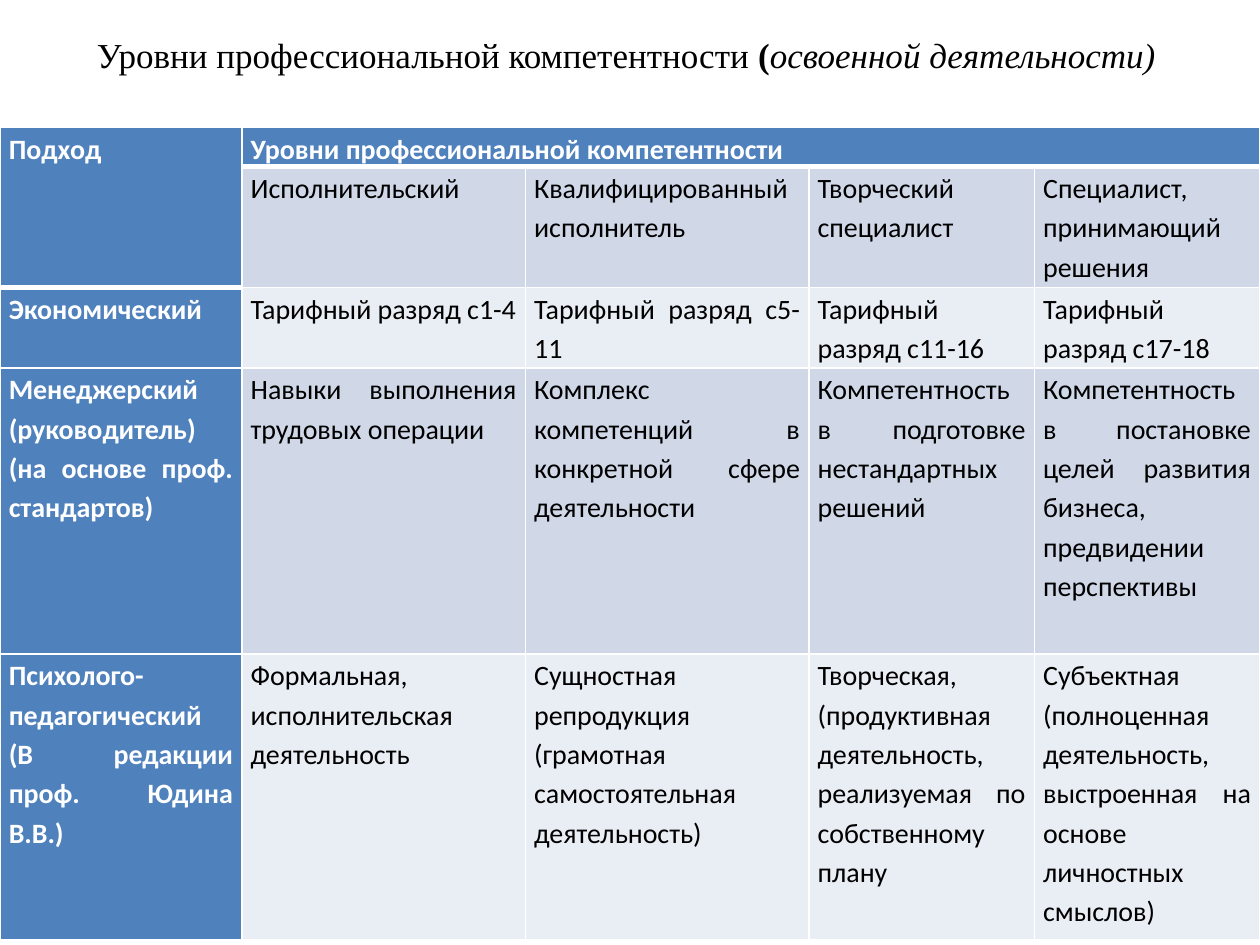
import pptx
import pptx.dml.color
import pptx.enum.text
import pptx.oxml
import pptx.oxml.ns
import pptx.util

Inches, Pt = pptx.util.Inches, pptx.util.Pt
BLUE, WHITE, BLACK = "4F81BD", "FFFFFF", "000000"
BANDS = ["D0D8E8", "E9EDF4"]
COLUMNS = [1.92, 2.25, 2.25, 1.79, 1.79]
ROWS = [0.31, 0.96, 0.64, 2.27, 2.27]
TABLE_TOP = 1.01

# One entry per cell; a line break starts a new paragraph.
TEXTS = [
    ["Подход", "Уровни профессиональной компетентности", "", "", ""],
    ["", "Исполнительский", "Квалифицированный исполнитель",
     "Творческий специалист", "Специалист, принимающий решения "],
    ["Экономический ", "Тарифный разряд с1-4", "Тарифный разряд с5-11",
     "Тарифный разряд с11-16", "Тарифный разряд с17-18"],
    ["Менеджерский\n(руководитель)\n(на основе проф. стандартов)",
     "Навыки выполнения трудовых операции ",
     "Комплекс компетенций в конкретной сфере деятельности",
     "Компетентность в подготовке нестандартных решений",
     "Компетентность в постановке целей развития бизнеса, предвидении перспективы"],
    ["Психолого-педагогический\n(В редакции проф. Юдина В.В.)",
     "Формальная, исполнительская деятельность",
     "Сущностная  репродукция (грамотная самостоятельная деятельность)",
     "Творческая, (продуктивная деятельность, реализуемая по собственному плану",
     "Субъектная (полноценная деятельность, выстроенная на основе личностных смыслов)"],
]


def add_span(para, text, font, size, color, bold=False, italic=False):
    span = para.add_run()
    span.text = text
    span.font.name, span.font.size = font, Pt(size)
    span.font.bold, span.font.italic = bold, italic
    span.font.color.rgb = pptx.dml.color.RGBColor.from_string(color)


def paint_cell(cell, color, bottom):
    """Draw white borders, the lower one `bottom` points wide, and fill the cell."""
    properties = cell._tc.get_or_add_tcPr()
    for side, width in zip("LRTB", [1, 1, 1, bottom]):
        properties.append(pptx.oxml.parse_xml(
            f'<a:ln{side} {pptx.oxml.ns.nsdecls("a")} w="{Pt(width)}">'
            f'<a:solidFill><a:srgbClr val="{WHITE}"/></a:solidFill></a:ln{side}>'))
    cell.fill.solid()
    cell.fill.fore_color.rgb = pptx.dml.color.RGBColor.from_string(color)


deck = pptx.Presentation()
deck.slide_width, deck.slide_height = Inches(10), Inches(7.5)
page = deck.slides.add_slide(deck.slide_layouts[6])

# Table
table = page.shapes.add_table(
    len(ROWS), len(COLUMNS), 0, Inches(TABLE_TOP),
    Inches(sum(COLUMNS)), Inches(sum(ROWS))).table
for column, width in zip(table.columns, COLUMNS):
    column.width = Inches(width)
for row, height in zip(table.rows, ROWS):
    row.height = Inches(height)
table.cell(0, 0).merge(table.cell(1, 0))
table.cell(0, 1).merge(table.cell(0, len(COLUMNS) - 1))

for r, texts in enumerate(TEXTS):
    for c, text in enumerate(texts):
        cell = table.cell(r, c)
        heading = r == 0 or c == 0
        under_heading = r == 0 or (r, c) == (1, 0)
        paint_cell(cell, BLUE if heading else BANDS[(r - 1) % 2],
                   3 if under_heading else 1)
        cell.margin_left = cell.margin_right = Inches(0.07)
        cell.margin_top = cell.margin_bottom = 0
        if cell.is_spanned:
            continue
        for number, line in enumerate(text.split("\n")):
            frame = cell.text_frame
            para = frame.add_paragraph() if number else frame.paragraphs[0]
            para.alignment = pptx.enum.text.PP_ALIGN.JUSTIFY
            para.line_spacing = 1.15
            add_span(para, line, "Calibri", 16, WHITE if heading else BLACK, bold=heading)

# Title
title = page.shapes.add_textbox(Inches(0.67), Inches(0.21), Inches(8.75), Inches(0.44))
title.text_frame.word_wrap = False
title.text_frame.auto_size = pptx.enum.text.MSO_AUTO_SIZE.SHAPE_TO_FIT_TEXT
title.text_frame.vertical_anchor = pptx.enum.text.MSO_ANCHOR.MIDDLE
for text, bold, italic in [("Уровни профессиональной компетентности", False, False),
                           (" (", True, False),
                           ("освоенной деятельности)", False, True)]:
    add_span(title.text_frame.paragraphs[0], text, "Times New Roman", 20, BLACK, bold, italic)

deck.save("out.pptx")
